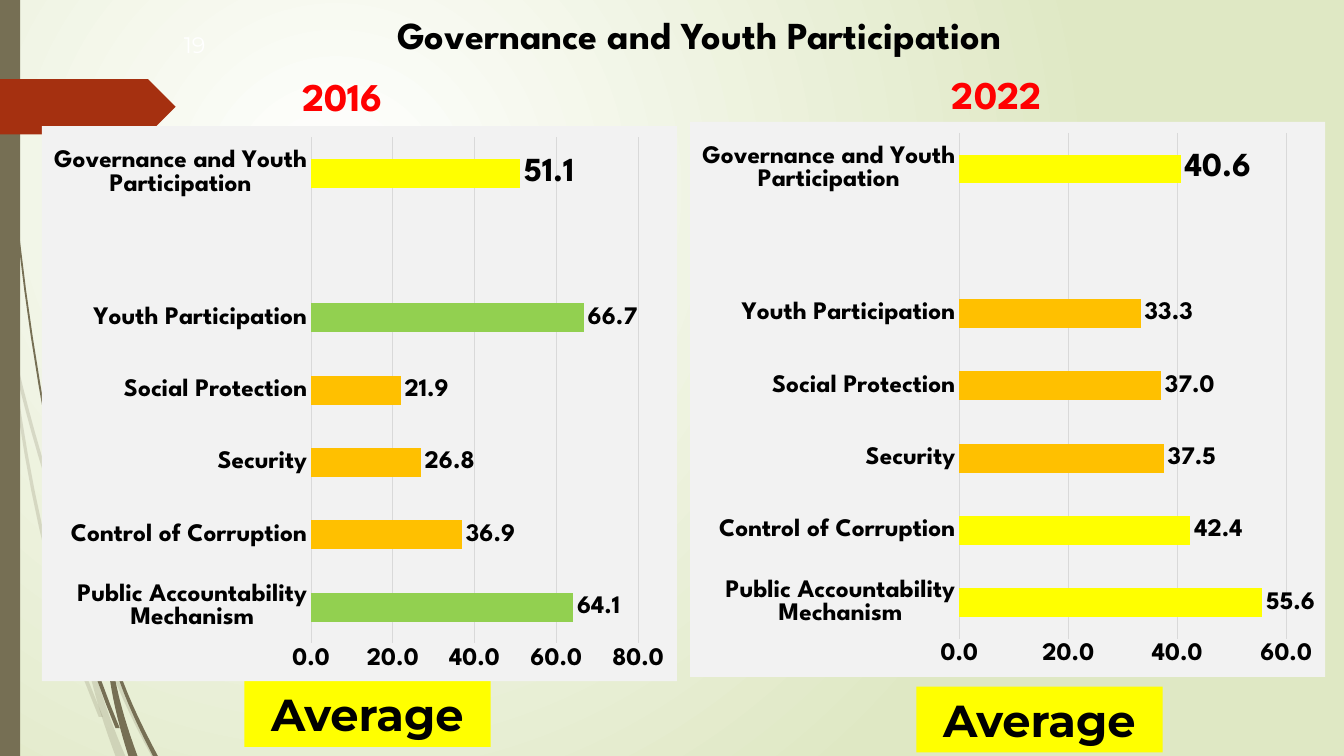
from lxml import etree
from pptx import Presentation
from pptx.chart.data import CategoryChartData
from pptx.dml.color import RGBColor
from pptx.enum.chart import XL_CHART_TYPE, XL_LABEL_POSITION, XL_TICK_MARK
from pptx.enum.shapes import MSO_SHAPE
from pptx.enum.text import MSO_ANCHOR, PP_ALIGN
from pptx.oxml import parse_xml
from pptx.oxml.ns import nsdecls, qn
from pptx.util import Pt

RECTANGLE, PENTAGON = MSO_SHAPE.RECTANGLE, MSO_SHAPE.PENTAGON
BAR_CLUSTERED = XL_CHART_TYPE.BAR_CLUSTERED
OUTSIDE_END = XL_LABEL_POSITION.OUTSIDE_END
NO_TICK = XL_TICK_MARK.NONE
MIDDLE, CENTER = MSO_ANCHOR.MIDDLE, PP_ALIGN.CENTER

WHITE = RGBColor(0xFF, 0xFF, 0xFF)
BLACK = RGBColor(0x00, 0x00, 0x00)
RED = RGBColor(0xFF, 0x00, 0x00)
YELLOW = RGBColor(0xFF, 0xFF, 0x00)
ORANGE = RGBColor(0xFF, 0xC0, 0x00)
GREEN = RGBColor(0x92, 0xD0, 0x50)
PALE_GREEN = RGBColor(0xDF, 0xE8, 0xC4)
OLIVE = RGBColor(0x76, 0x6F, 0x54)
RUST = RGBColor(0xA5, 0x30, 0x10)
PANEL_GREY = RGBColor(0xF2, 0xF2, 0xF2)
GRID_GREY = RGBColor(0xD9, 0xD9, 0xD9)

HEADING_FONT, BODY_FONT = "League Spartan", "Montserrat"
CHART_SIZE = (453.5, 396.5)
YEAR_SIZE = (170, 39)
AVERAGE_SIZE = (176, 47)

# Categories, values and colours run from the bottom bar up.
CATEGORIES = ["Public Accountability Mechanism", "Control of Corruption", "Security",
              "Social Protection", "Youth Participation", "",
              "Governance and Youth Participation"]
OVERALL = CATEGORIES.index("Governance and Youth Participation")

PANELS = [
    {"year": "2016", "year_at": (159.5, 49), "chart_at": (30, 90),
     "average_at": (174.5, 486.5), "maximum": 80,
     "values": [64.1, 36.9, 26.8, 21.9, 66.7, None, 51.1],
     "colors": [GREEN, ORANGE, ORANGE, ORANGE, GREEN, None, YELLOW]},
    {"year": "2022", "year_at": (627, 47.5), "chart_at": (493, 87),
     "average_at": (654.5, 490.5), "maximum": 60,
     "values": [55.6, 42.4, 37.5, 37.0, 33.3, None, 40.6],
     "colors": [YELLOW, YELLOW, ORANGE, ORANGE, ORANGE, None, YELLOW]},
]

# Grass blades: four Bezier control points, width at top and bottom, opacity in percent.
BLADES = [
    ([(10, 255), (20, 298), (31, 338), (61, 427)], 2.5, 2.5, 20),
    ([(8, 252), (18, 330), (33, 420), (72, 512)], 2, 3, 20),
    ([(65, 433), (75, 470), (92, 508), (110, 540)], 2, 3.5, 20),
    ([(66, 480), (71, 500), (78, 520), (86, 540)], 4, 7, 20),
    ([(2.5, 0), (4, 115), (18, 230), (41, 344)], 1, 1.5, 100),
    ([(41, 344), (45, 405), (61, 465), (84, 520)], 2, 3, 100),
    ([(80, 465), (86, 490), (99, 517), (111, 540)], 2, 3.5, 100),
    ([(78, 470), (81, 494), (87, 517), (95, 540)], 3, 6.5, 100),
]
BLADE_STEPS = 10


def bezier_point(controls, t):
    weights = ((1 - t) ** 3, 3 * t * (1 - t) ** 2, 3 * t ** 2 * (1 - t), t ** 3)
    return [sum(weight * value for weight, value in zip(weights, values))
            for values in zip(*controls)]


def blade_outline(controls, top_width, bottom_width):
    """Return the outline down the left side of the curve and back up the right."""
    left, right = [], []
    for step in range(BLADE_STEPS + 1):
        t = step / BLADE_STEPS
        x, y = bezier_point(controls, t)
        half = (top_width + (bottom_width - top_width) * t) / 2
        left.append((Pt(x - half), Pt(y)))
        right.append((Pt(x + half), Pt(y)))
    return left + right[::-1]


class SlideBuilder:
    def __init__(self, slide):
        self.slide = slide
        self.shapes = slide.shapes

    def background(self, center_color, edge_color):
        """Fill the background with a round gradient centred at upper left."""
        fill = self.slide.background.fill
        fill.gradient()
        for stop, color, position in zip(fill.gradient_stops,
                                         (center_color, edge_color), (0, 1)):
            stop.color.rgb = color
            stop.position = position
        gradient = self.slide.element.find(".//" + qn("a:gradFill"))
        linear = gradient.find(qn("a:lin"))
        gradient.replace(linear, parse_xml(
            f'<a:path {nsdecls("a")} path="circle">'
            '<a:fillToRect l="50000" t="50000" r="100000" b="100000"/></a:path>'))

    def paint(self, shape, color):
        shape.shadow.inherit = False
        shape.fill.solid()
        shape.fill.fore_color.rgb = color
        shape.line.fill.background()

    def block(self, kind, box, color):
        shape = self.shapes.add_shape(kind, *map(Pt, box))
        self.paint(shape, color)
        return shape

    def blade(self, controls, top_width, bottom_width, opacity):
        start, *rest = blade_outline(controls, top_width, bottom_width)
        outline = self.shapes.build_freeform(*start)
        outline.add_line_segments(rest, close=True)
        shape = outline.convert_to_shape()
        self.paint(shape, OLIVE)
        if opacity < 100:
            color = shape.element.spPr.find(qn("a:solidFill"))[0]
            etree.SubElement(color, qn("a:alpha")).set("val", str(opacity * 1000))

    def text(self, text, box, size, font_name, color=BLACK, bold=True, fill=None):
        if fill is None:
            shape = self.shapes.add_textbox(*map(Pt, box))
        else:
            shape = self.block(RECTANGLE, box, fill)
        frame = shape.text_frame
        frame.word_wrap = True
        frame.vertical_anchor = MIDDLE
        frame.text = text
        paragraph = frame.paragraphs[0]
        paragraph.alignment = CENTER
        self.style_font(paragraph.runs[0].font, size, font_name, color, bold)

    def style_font(self, font, size, name=HEADING_FONT, color=BLACK, bold=True):
        font.size, font.name, font.bold = Pt(size), name, bold
        font.color.rgb = color

    def bar_chart(self, box, values, colors, maximum):
        data = CategoryChartData(number_format="0.0")
        data.categories = CATEGORIES
        data.add_series("Series 1", values)
        chart = self.shapes.add_chart(BAR_CLUSTERED, *map(Pt, box), data).chart
        chart.has_legend = chart.has_title = False
        self.style_font(chart.font, 18)
        self.frame_chart(chart)
        self.style_axes(chart, maximum)
        self.style_bars(chart.plots[0], colors)

    def frame_chart(self, chart):
        """Give the chart its grey panel and fix the place of the bars in it."""
        body = chart.element.find(qn("c:chart"))
        body.addnext(parse_xml(
            f'<c:spPr {nsdecls("c", "a")}><a:solidFill><a:srgbClr val="{PANEL_GREY}"/>'
            '</a:solidFill><a:ln><a:noFill/></a:ln></c:spPr>'))
        plot_area = body.find(qn("c:plotArea"))
        for layout in plot_area.findall(qn("c:layout")):
            plot_area.remove(layout)
        places = "".join(f'<c:{name} val="{value}"/>' for name, value in (
            ("layoutTarget", "inner"), ("xMode", "edge"), ("yMode", "edge"),
            ("x", 0.424), ("y", 0.02), ("w", 0.515), ("h", 0.912)))
        plot_area.insert(0, parse_xml(
            f'<c:layout {nsdecls("c")}><c:manualLayout>{places}</c:manualLayout></c:layout>'))

    def style_axes(self, chart, maximum):
        for axis in (chart.category_axis, chart.value_axis):
            axis.major_tick_mark = axis.minor_tick_mark = NO_TICK
            axis.format.line.fill.background()
            self.style_font(axis.tick_labels.font, 18)
        chart.category_axis.has_major_gridlines = False
        scale = chart.value_axis
        scale.minimum_scale, scale.maximum_scale, scale.major_unit = 0, maximum, 20
        scale.tick_labels.number_format = "0.0"
        scale.tick_labels.number_format_is_linked = False
        scale.has_major_gridlines = True
        grid_line = scale.major_gridlines.format.line
        grid_line.color.rgb, grid_line.width = GRID_GREY, Pt(0.75)

    def style_bars(self, plot, colors):
        plot.gap_width = 150
        plot.vary_by_categories = False
        series = plot.series[0]
        for index, color in enumerate(colors):
            if color is not None:
                fill = series.points[index].format.fill
                fill.solid()
                fill.fore_color.rgb = color
        labels = series.data_labels
        labels.show_value = True
        labels.number_format = "0.0"
        labels.number_format_is_linked = False
        for label, size in ((labels, 18), (series.points[OVERALL].data_label, 24)):
            self.style_font(label.font, size)
            label.position = OUTSIDE_END


def main():
    presentation = Presentation()
    presentation.slide_width, presentation.slide_height = Pt(960), Pt(540)
    builder = SlideBuilder(presentation.slides.add_slide(presentation.slide_layouts[6]))

    builder.background(WHITE, PALE_GREEN)
    for blade in BLADES:
        builder.blade(*blade)
    builder.block(RECTANGLE, (0, 0, 14.5, 540), OLIVE)
    builder.block(PENTAGON, (0, 56.5, 125.5, 39.5), RUST)

    builder.text("Governance and Youth Participation", (241, 0.5, 517, 48), 27.2, HEADING_FONT)
    builder.text("19", (109, 18, 60, 28), 16, BODY_FONT, WHITE, bold=False)
    for panel in PANELS:
        builder.text("Average", panel["average_at"] + AVERAGE_SIZE, 32, BODY_FONT, fill=YELLOW)
        builder.text(panel["year"], panel["year_at"] + YEAR_SIZE, 28, HEADING_FONT, RED)
        builder.bar_chart(panel["chart_at"] + CHART_SIZE, panel["values"],
                          panel["colors"], panel["maximum"])
    presentation.save("out.pptx")


if __name__ == "__main__":
    main()
